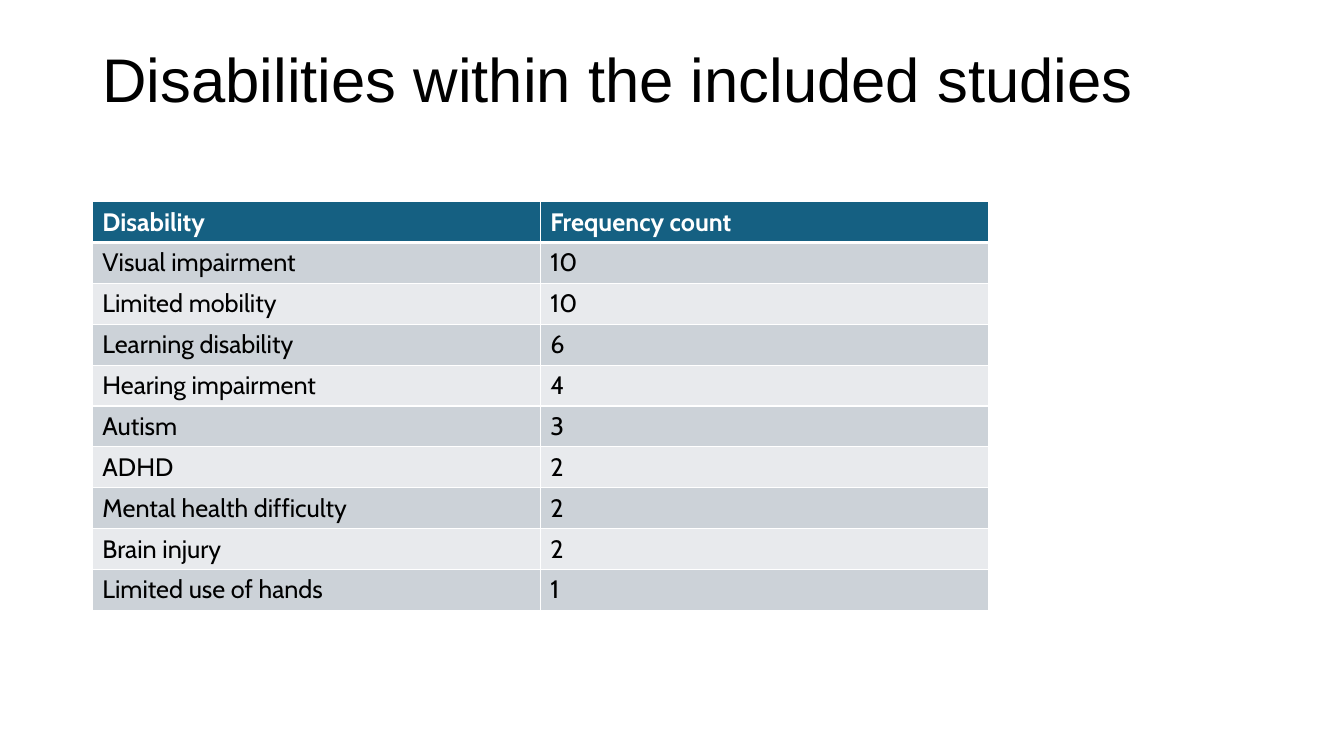
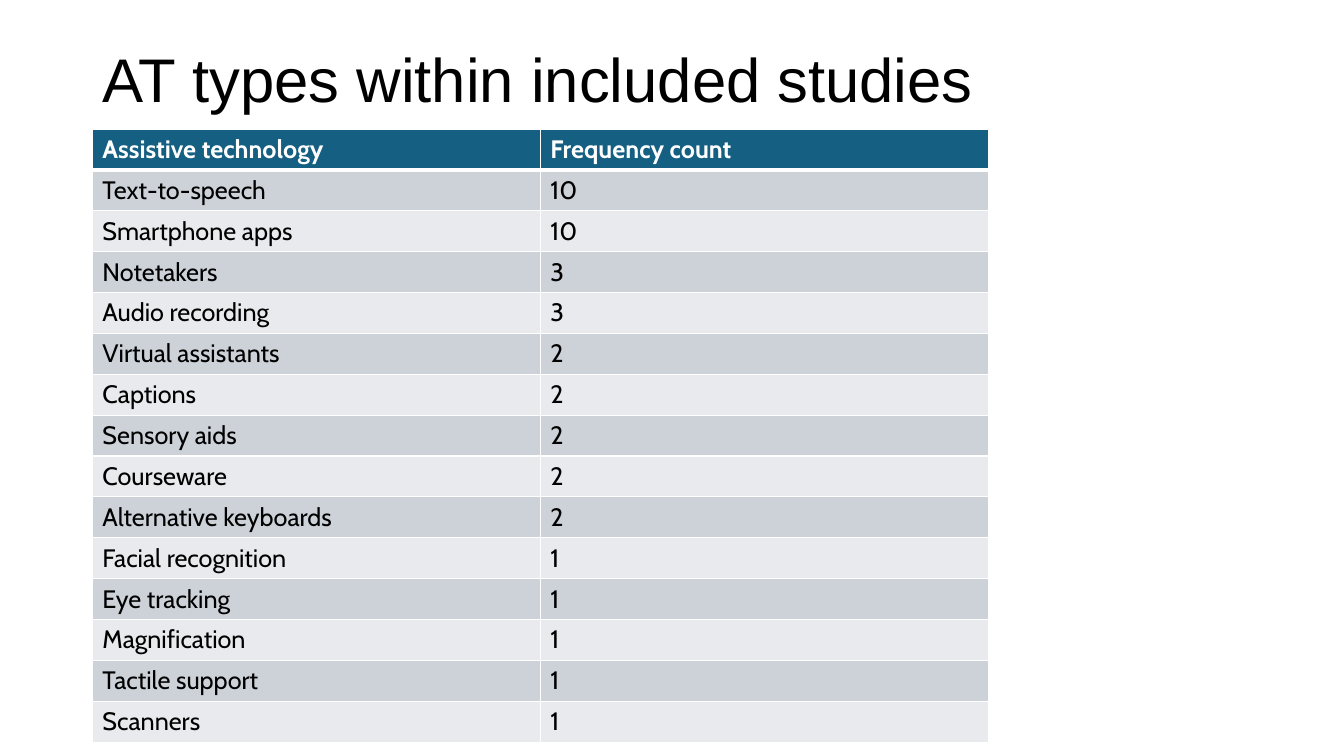
from dataclasses import dataclass

import pptx
import pptx.dml.color
import pptx.enum.text
import pptx.oxml
import pptx.oxml.ns
import pptx.presentation
import pptx.slide
import pptx.table
import pptx.util

GRID_COLUMNS = 160
GRID_ROWS = 90
UNIT = pptx.util.Pt(6)
LEFT_MARGIN = 11
TITLE_TOP, TITLE_WIDTH, TITLE_HEIGHT = 4.8, 138, 17.4
COLUMN_WIDTH = GRID_COLUMNS / 3
ROW_HEIGHT = pptx.util.Pt(29.2)
TITLE_ONLY_LAYOUT = 5


@dataclass(frozen=True)
class Theme:
    ink: str = "000000"
    paper: str = "FFFFFF"
    header: str = "156082"
    bands: tuple[str, str] = ("CCD2D8", "E8EAED")
    title_font: str = "Arial"
    table_font: str = "Cabin"
    title_size: float = 44
    table_size: float = 18
    rule: float = 1
    header_rule: float = 3


@dataclass(frozen=True)
class FrequencySlide:
    title: str
    subject: str
    table_top: float
    counts: dict[str, int]


THEME = Theme()

SLIDES = (
    FrequencySlide(
        "Disabilities within the included studies",
        "Disability",
        24,
        {
            "Visual impairment": 10,
            "Limited mobility": 10,
            "Learning disability": 6,
            "Hearing impairment": 4,
            "Autism": 3,
            "ADHD": 2,
            "Mental health difficulty": 2,
            "Brain injury": 2,
            "Limited use of hands": 1,
        },
    ),
    FrequencySlide(
        "AT types within included studies",
        "Assistive technology",
        15.36,
        {
            "Text-to-speech": 10,
            "Smartphone apps": 10,
            "Notetakers": 3,
            "Audio recording": 3,
            "Virtual assistants": 2,
            "Captions": 2,
            "Sensory aids": 2,
            "Courseware": 2,
            "Alternative keyboards": 2,
            "Facial recognition": 1,
            "Eye tracking": 1,
            "Magnification": 1,
            "Tactile support": 1,
            "Scanners": 1,
        },
    ),
)


def grid(units: float) -> pptx.util.Emu:
    return pptx.util.Emu(round(units * UNIT))


def rgb(colour: str) -> pptx.dml.color.RGBColor:
    return pptx.dml.color.RGBColor.from_string(colour)


def style_font(paragraph, face: str, size: float, colour: str, bold: bool = False) -> None:
    font = paragraph.font
    font.name = face
    font.size = pptx.util.Pt(size)
    font.bold = bold
    font.color.rgb = rgb(colour)


def add_title(slide: pptx.slide.Slide, text: str) -> None:
    title = slide.shapes.title
    title.left, title.top = grid(LEFT_MARGIN), grid(TITLE_TOP)
    title.width, title.height = grid(TITLE_WIDTH), grid(TITLE_HEIGHT)
    frame = title.text_frame
    frame.text = text
    frame.auto_size = pptx.enum.text.MSO_AUTO_SIZE.NONE
    frame.vertical_anchor = pptx.enum.text.MSO_ANCHOR.TOP
    frame.margin_top = pptx.util.Inches(0.09)
    heading = frame.paragraphs[0]
    heading.alignment = pptx.enum.text.PP_ALIGN.LEFT
    heading.line_spacing = 0.9
    style_font(heading, THEME.title_font, THEME.title_size, THEME.ink)


def set_borders(cell: pptx.table._Cell, top: float, bottom: float) -> None:
    properties = cell._tc.get_or_add_tcPr()
    widths = {"lnL": THEME.rule, "lnR": THEME.rule, "lnT": top, "lnB": bottom}
    for position, (edge, width) in enumerate(widths.items()):
        border = pptx.oxml.parse_xml(
            f'<a:{edge} {pptx.oxml.ns.nsdecls("a")} w="{pptx.util.Pt(width)}">'
            f'<a:solidFill><a:srgbClr val="{THEME.paper}"/></a:solidFill></a:{edge}>'
        )
        properties.insert(position, border)


def style_cell(cell: pptx.table._Cell, row: int) -> None:
    is_header = row == 0
    cell.fill.solid()
    cell.fill.fore_color.rgb = rgb(THEME.header if is_header else THEME.bands[(row - 1) % 2])
    set_borders(
        cell,
        top=THEME.header_rule if row == 1 else THEME.rule,
        bottom=THEME.header_rule if is_header else THEME.rule,
    )
    style_font(
        cell.text_frame.paragraphs[0],
        THEME.table_font,
        THEME.table_size,
        THEME.paper if is_header else THEME.ink,
        bold=is_header,
    )


def add_frequency_table(slide: pptx.slide.Slide, content: FrequencySlide) -> None:
    entries = [(content.subject, "Frequency count"), *content.counts.items()]
    table = slide.shapes.add_table(
        len(entries),
        2,
        grid(LEFT_MARGIN),
        grid(content.table_top),
        grid(2 * COLUMN_WIDTH),
        ROW_HEIGHT * len(entries),
    ).table
    for row, entry in enumerate(entries):
        table.rows[row].height = ROW_HEIGHT
        for column, value in enumerate(entry):
            cell = table.cell(row, column)
            cell.text = str(value)
            style_cell(cell, row)


def add_frequency_slide(deck: pptx.presentation.Presentation, content: FrequencySlide) -> None:
    slide = deck.slides.add_slide(deck.slide_layouts[TITLE_ONLY_LAYOUT])
    add_title(slide, content.title)
    add_frequency_table(slide, content)


def main() -> None:
    deck = pptx.Presentation()
    deck.slide_width, deck.slide_height = grid(GRID_COLUMNS), grid(GRID_ROWS)
    for content in SLIDES:
        add_frequency_slide(deck, content)
    deck.save("out.pptx")


if __name__ == "__main__":
    main()
